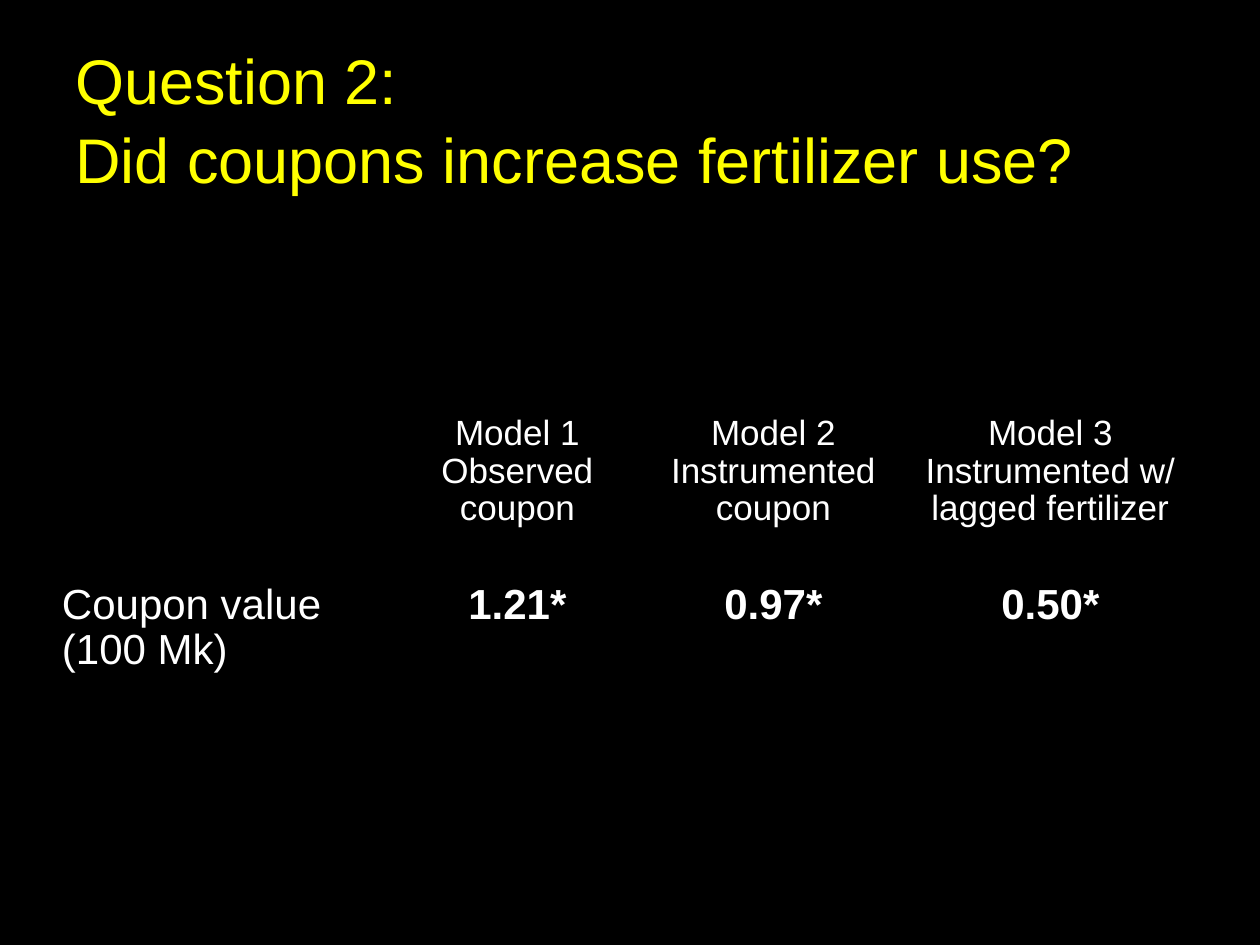
"""Build the slide on coupons and fertilizer use."""
import pptx
import pptx.dml.color
import pptx.enum.text
import pptx.util

PIXEL = 914400 // 126
BLACK = pptx.dml.color.RGBColor(0, 0, 0)
WHITE = pptx.dml.color.RGBColor(255, 255, 255)
YELLOW = pptx.dml.color.RGBColor(255, 255, 0)
LEFT = pptx.enum.text.PP_ALIGN.LEFT
CENTER = pptx.enum.text.PP_ALIGN.CENTER
NO_STYLE_NO_GRID = "{2D5ABB26-0587-4C30-8999-92F81FD0307C}"


def write(paragraph, lines, size, color, alignment, spacing, bold=False):
    paragraph.alignment = alignment
    paragraph.line_spacing = spacing
    for index, line in enumerate(lines):
        if index:
            paragraph.add_line_break()
        run = paragraph.add_run()
        run.text = line
        run.font.name = "Arial"
        run.font.size = pptx.util.Pt(size)
        run.font.bold = bold
        run.font.color.rgb = color


presentation = pptx.Presentation()
presentation.slide_width = 1260 * PIXEL
presentation.slide_height = 945 * PIXEL
slide = presentation.slides.add_slide(presentation.slide_layouts[6])
slide.background.fill.solid()
slide.background.fill.fore_color.rgb = BLACK

title = slide.shapes.add_textbox(63 * PIXEL, 38 * PIXEL, 1134 * PIXEL, 158 * PIXEL)
title.text_frame.word_wrap = True
title.text_frame.vertical_anchor = pptx.enum.text.MSO_ANCHOR.MIDDLE
title_lines = ["Question 2:", "Did coupons increase fertilizer use?"]
write(title.text_frame.paragraphs[0], title_lines, 36, YELLOW, LEFT, 1.05)

column_widths = [339, 251, 261, 293]
row_heights = [168, 136, 57]
frame = slide.shapes.add_table(
    len(row_heights), len(column_widths), 53 * PIXEL, 416 * PIXEL,
    sum(column_widths) * PIXEL, sum(row_heights) * PIXEL)
table = frame.table
table.first_row = False
table.horz_banding = False
table._tbl.tblPr.find(pptx.oxml.ns.qn("a:tableStyleId")).text = NO_STYLE_NO_GRID
for column, width in zip(table.columns, column_widths):
    column.width = width * PIXEL
for row, height in zip(table.rows, row_heights):
    row.height = height * PIXEL
for cell in table.iter_cells():
    cell.fill.background()
    cell.margin_left = cell.margin_right = 9 * PIXEL
    cell.margin_top = cell.margin_bottom = 0

write(table.cell(1, 0).text_frame.paragraphs[0], ["Coupon value", "(100 Mk)"],
      24, WHITE, LEFT, 0.96)

models = [
    ("Model 1", ["Observed coupon"], "1.21*"),
    ("Model 2", ["Instrumented", "coupon"], "0.97*"),
    ("Model 3", ["Instrumented w/ lagged fertilizer"], "0.50*"),
]
for column, (name, description, estimate) in enumerate(models, start=1):
    header = table.cell(0, column).text_frame
    write(header.paragraphs[0], [name], 20, WHITE, CENTER, 0.96)
    write(header.add_paragraph(), description, 20, WHITE, CENTER, 0.96)
    write(table.cell(1, column).text_frame.paragraphs[0], [estimate],
          24, WHITE, CENTER, 0.96, bold=True)

presentation.save("out.pptx")
